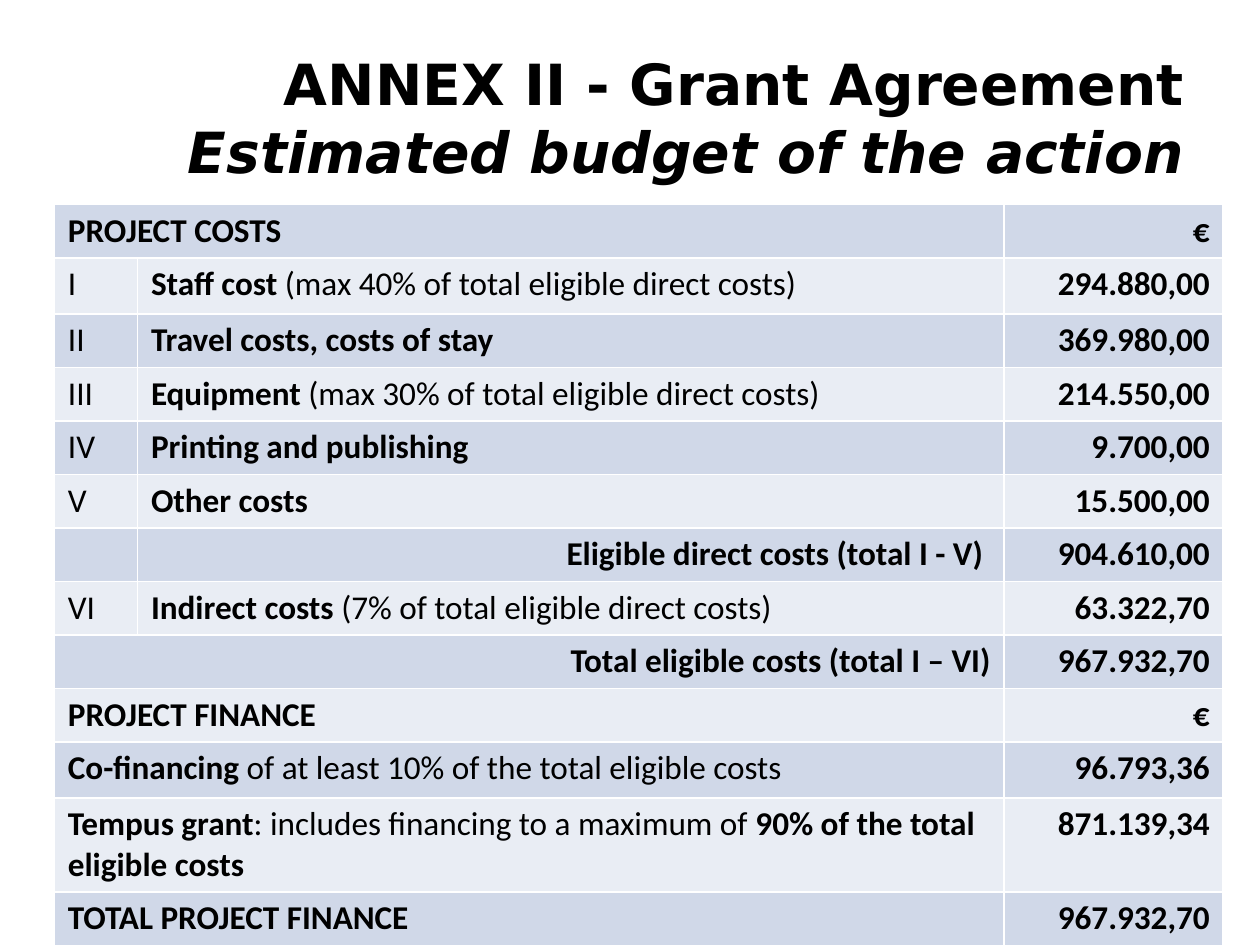
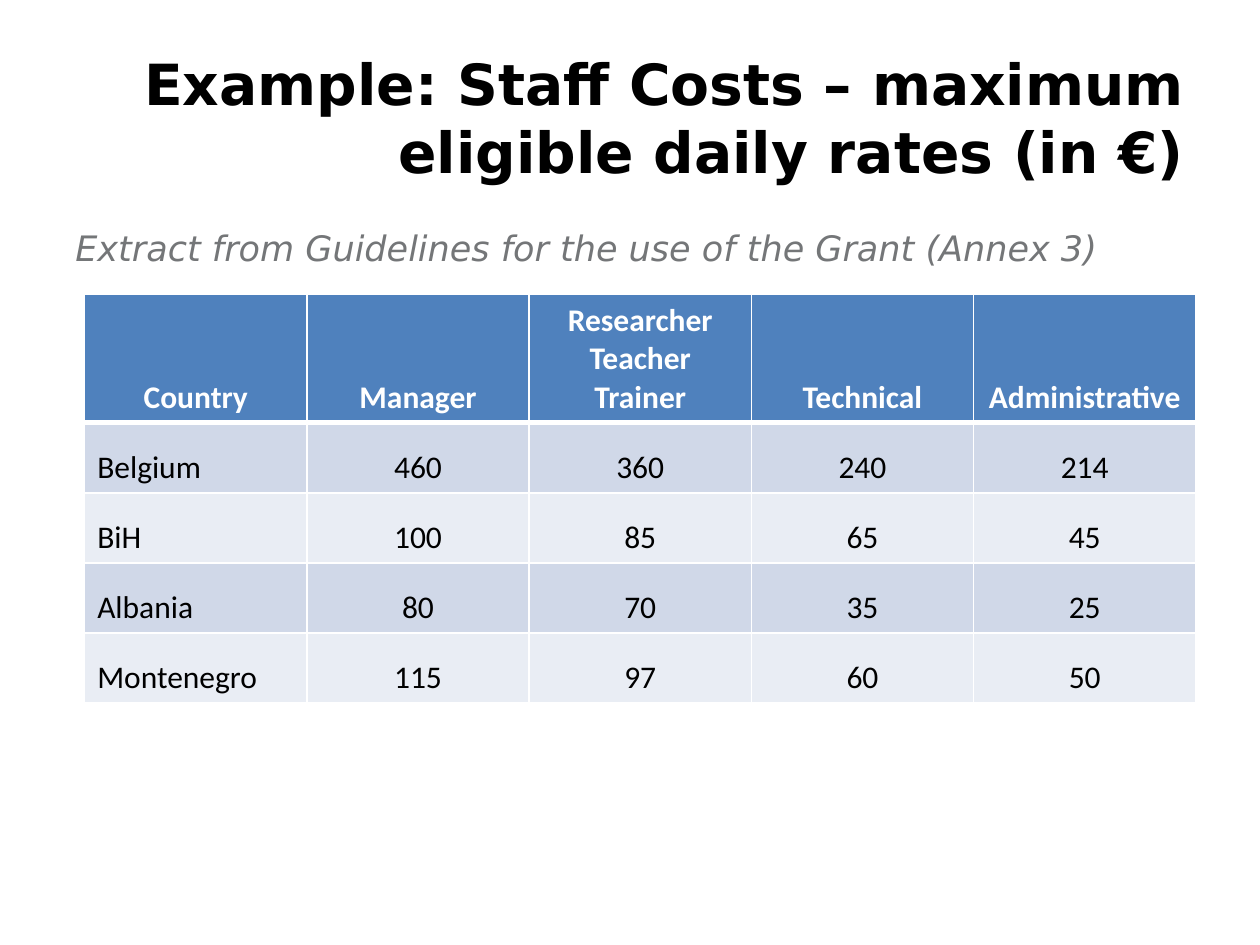
from lxml import etree
from pptx import Presentation
from pptx import oxml
from pptx.dml.color import RGBColor
from pptx.enum import text as t
from pptx.util import Pt

COLOURS = {"ink": "000000", "white": "FFFFFF", "grey": "747678",
           "header": "4F81BD", "dark band": "D0D8E8", "light band": "E9EDF4"}
TITLE_FONT, TABLE_FONT = "DejaVu Sans", "Calibri"
LEFT, CENTER, RIGHT = t.PP_ALIGN.LEFT, t.PP_ALIGN.CENTER, t.PP_ALIGN.RIGHT

BUDGET_TITLE = "ANNEX II - Grant Agreement\nEstimated budget of the action"
# Number (None: label spans both columns), label (bold and plain parts alternate),
# label alignment, amount
BUDGET = [
    (None, ["PROJECT COSTS"], LEFT, "€"),
    ("I", ["Staff cost ", "(max 40% of total eligible direct costs)"], LEFT, "294.880,00"),
    ("II", ["Travel costs, costs of stay"], LEFT, "369.980,00"),
    ("III", ["Equipment ", "(max 30% of total eligible direct costs)"], LEFT, "214.550,00"),
    ("IV", ["Printing and publishing"], LEFT, "9.700,00"),
    ("V", ["Other costs"], LEFT, "15.500,00"),
    ("", ["Eligible direct costs (total I - V) "], RIGHT, "904.610,00"),
    ("VI", ["Indirect costs ", "(7% of total eligible direct costs)"], LEFT, "63.322,70"),
    (None, ["Total eligible costs (total I – VI)"], RIGHT, "967.932,70"),
    (None, ["PROJECT FINANCE"], LEFT, "€"),
    (None, ["Co-financing ", "of at least 10% of the total eligible costs"], LEFT, "96.793,36"),
    (None, ["Tempus grant", ": includes financing to a maximum of ",
            "90% of the total eligible costs"], LEFT, "871.139,34"),
    (None, ["TOTAL PROJECT FINANCE"], LEFT, "967.932,70"),
]
BUDGET_COLUMNS = [47.5, 495, 125.2]
BUDGET_ROW = 30.6
BUDGET_TALL_ROWS = {1: 32, 10: 32, 11: 53.6}

RATES_TITLE = "Example: Staff Costs – maximum eligible daily rates (in €)"
RATES_SOURCE = "Extract from Guidelines for the use of the Grant (Annex 3)"
RATES_HEADER = ["Country", "Manager", "Researcher\nTeacher\nTrainer", "Technical",
                "Administrative"]
RATES = [
    ("Belgium", 460, 360, 240, 214),
    ("BiH", 100, 85, 65, 45),
    ("Albania", 80, 70, 35, 25),
    ("Montenegro", 115, 97, 60, 50),
]


def colour(name):
    return RGBColor.from_string(COLOURS[name])


def style(paragraph, font, size, ink="ink", bold=False, italic=False, align=LEFT):
    paragraph.alignment = align
    paragraph.font.name, paragraph.font.size = font, Pt(size)
    paragraph.font.bold, paragraph.font.italic = bold, italic
    paragraph.font.color.rgb = colour(ink)


def add_titled_slide(deck, title):
    slide = deck.slides.add_slide(deck.slide_layouts[5])
    heading = slide.shapes.title
    heading.left, heading.top, heading.width, heading.height = Pt(36), Pt(21.6), Pt(648), Pt(90)
    frame = heading.text_frame
    frame.auto_size = t.MSO_AUTO_SIZE.NONE
    frame.vertical_anchor = t.MSO_ANCHOR.MIDDLE
    frame.paragraphs[0].text = title
    style(frame.paragraphs[0], TITLE_FONT, 32.4, bold=True, align=RIGHT)
    return slide


def add_plain_table(slide, left, top, columns, rows):
    """Add a table without style options, sized by its column widths and row heights."""
    table = slide.shapes.add_table(len(rows), len(columns), Pt(left), Pt(top),
                                   Pt(sum(columns)), Pt(sum(rows))).table
    table.first_row = table.horz_banding = False
    for column, width in zip(table.columns, columns):
        column.width = Pt(width)
    for row, height in zip(table.rows, rows):
        row.height = Pt(height)
    return table


def paint(cell, fill, bottom=1):
    """Fill a cell and give it white borders; bottom is the lower line's width."""
    cell.fill.solid()
    cell.fill.fore_color.rgb = colour(fill)
    properties = cell.fill._xPr
    for place, (side, width) in enumerate([("L", 1), ("R", 1), ("T", 1), ("B", bottom)]):
        line = etree.Element(oxml.ns.qn(f"a:ln{side}"), w=str(Pt(width)))
        solid = etree.SubElement(line, oxml.ns.qn("a:solidFill"))
        etree.SubElement(solid, oxml.ns.qn("a:srgbClr"), val=COLOURS["white"])
        properties.insert(place, line)


def band(index):
    return "light band" if index % 2 else "dark band"


def build_budget(deck):
    slide = add_titled_slide(deck, BUDGET_TITLE)
    slide.shapes.title.text_frame.paragraphs[0].runs[-1].font.italic = True
    heights = [BUDGET_TALL_ROWS.get(i, BUDGET_ROW) for i in range(len(BUDGET))]
    table = add_plain_table(slide, 31.2, 116.8, BUDGET_COLUMNS, heights)
    for i, (number, label, align, amount) in enumerate(BUDGET):
        number_cell, label_cell, amount_cell = table.rows[i].cells
        for cell in (number_cell, label_cell, amount_cell):
            paint(cell, band(i))
            cell.margin_left = cell.margin_right = Pt(7.6)
        if number is None:
            number_cell.merge(label_cell)
            label_cell = number_cell
        else:
            paragraph = number_cell.text_frame.paragraphs[0]
            paragraph.text = number
            style(paragraph, TABLE_FONT, 19)
        paragraph = label_cell.text_frame.paragraphs[0]
        style(paragraph, TABLE_FONT, 19, bold=True, align=align)
        for part, wording in enumerate(label):
            run = paragraph.add_run()
            run.text = wording
            if part % 2:
                run.font.bold = False
        paragraph = amount_cell.text_frame.paragraphs[0]
        paragraph.text = amount
        style(paragraph, TABLE_FONT, 19, bold=True, align=RIGHT)


def build_rates(deck):
    slide = add_titled_slide(deck, RATES_TITLE)
    source = slide.shapes.add_textbox(Pt(36), Pt(126), Pt(648), Pt(36)).text_frame
    source.word_wrap = True
    source.text = RATES_SOURCE
    style(source.paragraphs[0], TITLE_FONT, 20, ink="grey", italic=True)

    table = add_plain_table(slide, 48.4, 168.2, [127] * len(RATES_HEADER),
                            [73.4] + [40] * len(RATES))
    for i, values in enumerate([RATES_HEADER, *RATES]):
        is_header = i == 0
        for j, value in enumerate(values):
            cell = table.cell(i, j)
            cell.vertical_anchor = t.MSO_ANCHOR.BOTTOM
            paint(cell, "header" if is_header else band(i - 1), bottom=3 if is_header else 1)
            paragraph = cell.text_frame.paragraphs[0]
            paragraph.text = str(value)
            style(paragraph, TABLE_FONT, 18, ink="white" if is_header else "ink",
                  bold=is_header, align=CENTER if is_header or j else LEFT)


def main():
    deck = Presentation()
    deck.slide_width, deck.slide_height = Pt(720), Pt(540)
    build_budget(deck)
    build_rates(deck)
    deck.save("out.pptx")


if __name__ == "__main__":
    main()
